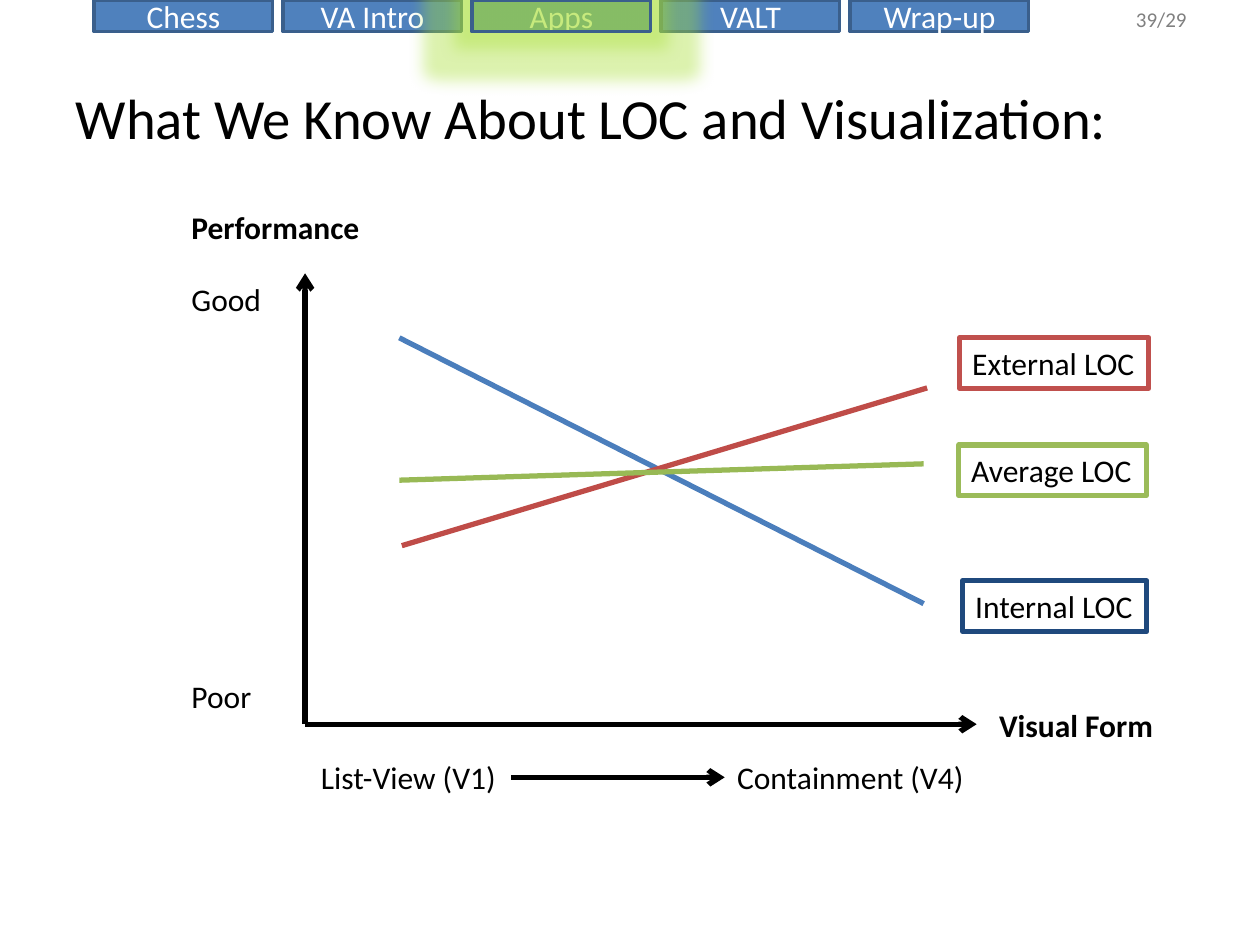
from lxml.etree import SubElement
from pptx import Presentation
from pptx.dml.color import RGBColor
from pptx.enum.shapes import MSO_CONNECTOR, MSO_SHAPE
from pptx.enum.text import MSO_ANCHOR, MSO_AUTO_SIZE, PP_ALIGN
from pptx.oxml.ns import qn
from pptx.util import Cm, Pt

FONT = "Calibri"
LABEL_HEIGHT = 1.02
TABS = ["Chess", "VA Intro", "Apps", "VALT", "Wrap-up"]
ACTIVE_TAB = TABS.index("Apps")
SERIES = [
    ("Internal LOC", "4B7EBC", "1F497D", (4.44, 2.75), (15.01, 8.11), (15.8, 7.65, 3.71)),
    ("External LOC", "BF4C48", "C0504D", (4.49, 6.94), (15.08, 3.76), (15.74, 2.75, 3.81)),
    ("Average LOC", "98B955", "9BBB59", (4.44, 5.62), (15.01, 5.29), (15.72, 4.91, 3.78)),
]


def color(value):
    """Turn a hex string into a colour."""
    return RGBColor.from_string(value)


def style_text(paragraph, size, ink, bold=False, align=PP_ALIGN.LEFT):
    """Format a whole paragraph."""
    paragraph.alignment = align
    font = paragraph.font
    font.name, font.size, font.bold = FONT, Pt(size), bold
    font.color.rgb = color(ink)


def add_label(shapes, text, left, top, width, height=LABEL_HEIGHT, size=18, ink="000000", bold=False):
    """Add a one-line label that fits its text."""
    label = shapes.add_textbox(Cm(left), Cm(top), Cm(width), Cm(height))
    frame = label.text_frame
    frame.word_wrap = False
    frame.auto_size = MSO_AUTO_SIZE.SHAPE_TO_FIT_TEXT
    frame.text = text
    style_text(frame.paragraphs[0], size, ink, bold)
    return label


def add_line(shapes, start, end, ink, arrow=False):
    """Add a straight line, with an arrowhead at its end if asked."""
    line = shapes.add_connector(MSO_CONNECTOR.STRAIGHT, *map(Cm, start + end))
    line.line.color.rgb = color(ink)
    line.line.width = Pt(3)
    if arrow:
        SubElement(line.line._get_or_add_ln(), qn("a:tailEnd"), type="arrow")
    SubElement(line._element.spPr, qn("a:effectLst"))
    return line


def add_tab(shapes, left, top, width, height):
    """Add an outlined, unfilled tab."""
    tab = shapes.add_shape(MSO_SHAPE.RECTANGLE, Cm(left), Cm(top), Cm(width), Cm(height))
    tab.shadow.inherit = False
    tab.fill.background()
    tab.line.color.rgb = color("3A5F8C")
    tab.line.width = Pt(2)
    return tab


def add_glow(shape, ink, radius):
    """Give a shape a translucent glow."""
    effects = shape._element.spPr.find(qn("a:effectLst"))
    glow = SubElement(effects, qn("a:glow"), rad=str(Pt(radius)))
    tint = SubElement(glow, qn("a:srgbClr"), val=ink)
    SubElement(tint, qn("a:satMod"), val="175000")
    SubElement(tint, qn("a:alpha"), val="40000")


def build_navigation(slide, left, top, width, height):
    """Build the section tabs and the page number."""
    pitch, tab_width = 3.81, 3.6
    for index, name in enumerate(TABS):
        tab = add_tab(slide.shapes, left + index * pitch, top, tab_width, height)
        tab.fill.solid()
        tab.fill.fore_color.rgb = color("4F81BD")
        frame = tab.text_frame
        frame.vertical_anchor = MSO_ANCHOR.MIDDLE
        frame.text = name
        style_text(frame.paragraphs[0], 18, "FFFFFF", align=PP_ALIGN.CENTER)
    number_width = 1.63
    add_label(slide.shapes, "39/29", left + width - number_width, top, number_width, 0.76, 12, "808080")
    highlight = add_tab(slide.shapes, left + ACTIVE_TAB * pitch, top, tab_width, height)
    add_glow(highlight, "9BBB59", 18)


def build_title(slide, left, top, width, height):
    """Place and format the title."""
    title = slide.shapes.title
    title.left, title.top, title.width, title.height = map(Cm, (left, top, width, height))
    frame = title.text_frame
    frame.text = "What We Know About LOC and Visualization:"
    frame.word_wrap = True
    frame.auto_size = MSO_AUTO_SIZE.NONE
    frame.vertical_anchor = MSO_ANCHOR.MIDDLE
    style_text(frame.paragraphs[0], 32.4, "000000")


def build_diagram(slide, left, top):
    """Build the performance diagram from its top left corner."""
    shapes = slide.shapes

    def at(x, y):
        return left + x, top + y

    origin = at(2.54, 10.54)
    for tip in (at(2.54, 1.45), at(16.08, 10.54)):
        add_line(shapes, origin, tip, "000000", arrow=True)

    add_label(shapes, "Performance", *at(0, 0), 3.94, bold=True)
    add_label(shapes, "Good", *at(0, 1.47), 1.93)
    add_label(shapes, "Poor", *at(0, 9.47), 1.73)
    add_label(shapes, "Visual Form", *at(16.28, 10.04), 3.63, bold=True)
    list_view = add_label(shapes, "List-View (V1)", *at(2.61, 11.1), 4.09)
    containment = add_label(shapes, "Containment (V4)", *at(11, 11.1), 5.28)
    progress = add_line(shapes, at(6.7, 11.61), at(11, 11.61), "000000", arrow=True)
    progress.begin_connect(list_view, 3)
    progress.end_connect(containment, 1)

    for name, line_ink, border_ink, start, end, (x, y, width) in SERIES:
        series = shapes.add_group_shape().shapes
        add_line(series, at(*start), at(*end), line_ink)
        label = add_label(series, name, *at(x, y), width)
        label.line.color.rgb = color(border_ink)
        label.line.width = Pt(3)


def main():
    """Build the slide and save it."""
    deck = Presentation()
    deck.slide_width, deck.slide_height = Cm(25.4), Cm(19.05)
    slide = deck.slides.add_slide(deck.slide_layouts[5])
    build_title(slide, 1.27, 0.76, 22.86, 3.18)
    build_diagram(slide, 3.61, 4.06)
    build_navigation(slide, 1.9, 0, 22.38, 0.64)
    deck.save("out.pptx")


if __name__ == "__main__":
    main()
